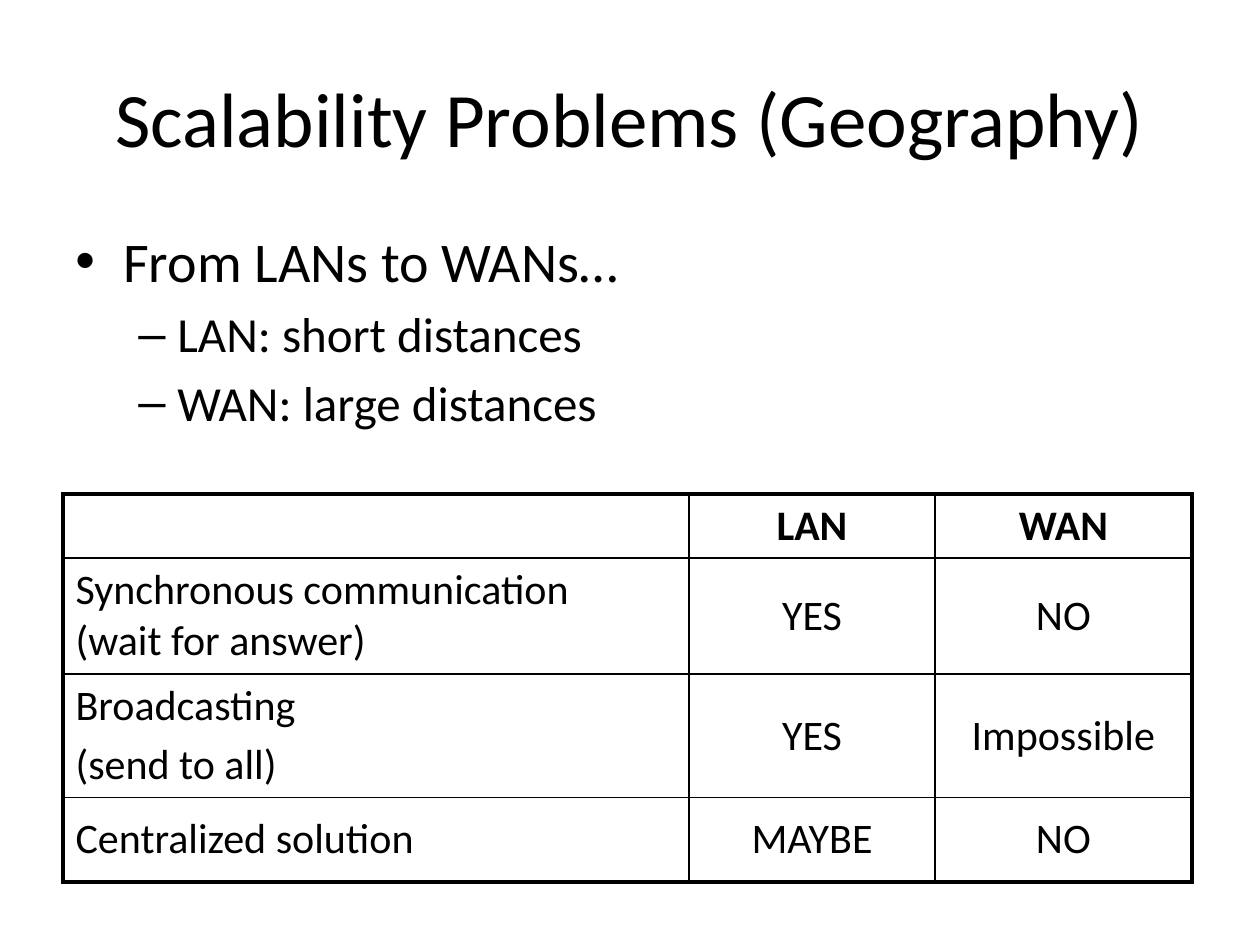
import pptx
import pptx.dml.color
import pptx.enum.text
import pptx.oxml
import pptx.oxml.ns
import pptx.util
from pptx.util import Inches

BLACK = pptx.dml.color.RGBColor(0, 0, 0)
FONT = "Calibri"
CENTER = pptx.enum.text.PP_ALIGN.CENTER
LEFT = pptx.enum.text.PP_ALIGN.LEFT
MIDDLE = pptx.enum.text.MSO_ANCHOR.MIDDLE
THIN, THICK = 1, 2.25


def add_text(para, text, size, align=LEFT, bold=False, space=0):
    para.alignment = align
    para.space_before = pptx.util.Pt(space)
    span = para.add_run()
    span.text = text
    span.font.name = FONT
    span.font.size = pptx.util.Pt(size)
    span.font.bold = bold
    span.font.color.rgb = BLACK


def add_border(cell, side, width):
    line = pptx.oxml.parse_xml(
        f'<a:{side} {pptx.oxml.ns.nsdecls("a")} w="{pptx.util.Pt(width)}">'
        f'<a:solidFill><a:srgbClr val="{BLACK}"/></a:solidFill></a:{side}>'
    )
    cell._tc.get_or_add_tcPr().append(line)


deck = pptx.Presentation()
deck.slide_width = Inches(10)
deck.slide_height = Inches(7.5)
page = deck.slides.add_slide(deck.slide_layouts[6])

# Title
title_box = page.shapes.add_textbox(Inches(0.5), Inches(0.3), Inches(9), Inches(1.25))
title_frame = title_box.text_frame
title_frame.word_wrap = True
title_frame.vertical_anchor = MIDDLE
add_text(title_frame.paragraphs[0], "Scalability Problems (Geography)", 44, CENTER)

# Bulleted text: text, level, size, bullet, left margin, hanging indent
bullets = [
    ("From LANs to WANs…", 0, 32, "•", 0.38, 0.38),
    ("LAN: short distances", 1, 28, "–", 0.81, 0.31),
    ("WAN: large distances", 1, 28, "–", 0.81, 0.31),
]
body_box = page.shapes.add_textbox(Inches(0.5), Inches(1.75), Inches(9), Inches(4.95))
body_frame = body_box.text_frame
body_frame.word_wrap = True
for index, (text, level, size, mark, margin, hanging) in enumerate(bullets):
    para = body_frame.add_paragraph() if index else body_frame.paragraphs[0]
    para.level = level
    add_text(para, text, size, space=size * 0.2)
    properties = para._p.get_or_add_pPr()
    properties.set("marL", str(Inches(margin)))
    properties.set("indent", str(-Inches(hanging)))
    namespace = pptx.oxml.ns.nsdecls("a")
    properties.append(pptx.oxml.parse_xml(f'<a:buFont {namespace} typeface="Arial"/>'))
    properties.append(pptx.oxml.parse_xml(f'<a:buChar {namespace} char="{mark}"/>'))

# Comparison table
rows = [
    ("", "LAN", "WAN"),
    ("Synchronous communication\n(wait for answer)", "YES", "NO"),
    ("Broadcasting\n(send to all)", "YES", "Impossible"),
    ("Centralized solution", "MAYBE", "NO"),
]
column_widths = [4.97, 1.95, 2.04]
row_heights = [0.51, 0.92, 0.98, 0.67]
last_row, last_column = len(rows) - 1, len(column_widths) - 1
frame = page.shapes.add_table(
    len(rows), len(column_widths), Inches(0.5), Inches(3.92),
    Inches(sum(column_widths)), Inches(sum(row_heights)),
)
table = frame.table
table.first_row = False
table.horz_banding = False
for column, width in zip(table.columns, column_widths):
    column.width = Inches(width)
for row, height in zip(table.rows, row_heights):
    row.height = Inches(height)

for r, texts in enumerate(rows):
    for c, text in enumerate(texts):
        cell = table.cell(r, c)
        cell.vertical_anchor = MIDDLE
        # Thick outer frame, thin inner lines
        outer = {"lnL": c == 0, "lnR": c == last_column,
                 "lnT": r == 0, "lnB": r == last_row}
        for side, is_outer in outer.items():
            add_border(cell, side, THICK if is_outer else THIN)
        cell.fill.background()
        for index, line in enumerate(text.split("\n")):
            para = cell.text_frame.add_paragraph() if index else cell.text_frame.paragraphs[0]
            if line:
                add_text(para, line, 24, CENTER if c else LEFT,
                         bold=r == 0, space=0 if r == 1 else 4.8)

deck.save("out.pptx")
